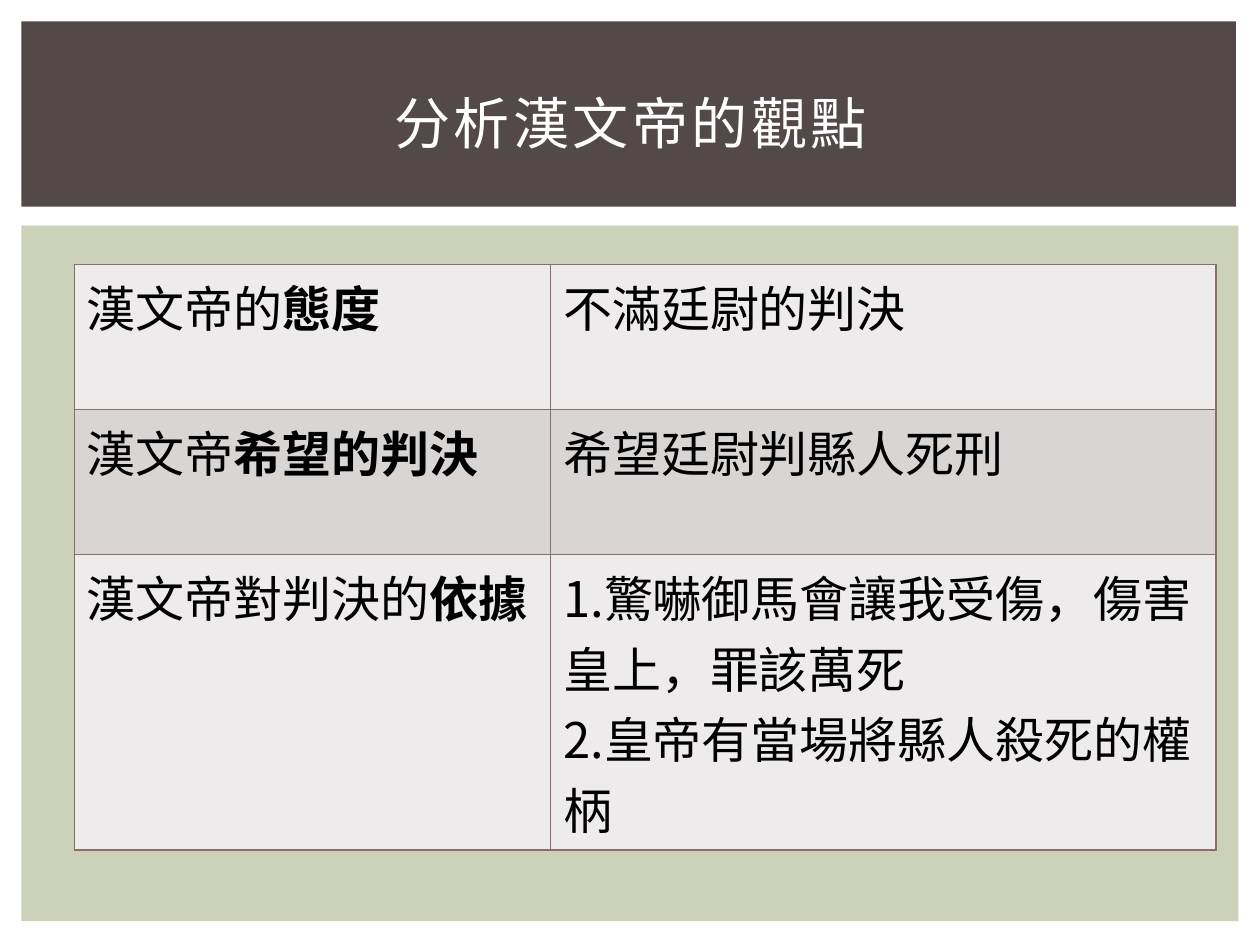
import pptx
import pptx.util
import pptx.dml.color
import pptx.enum.shapes
import pptx.enum.text
import pptx.oxml.ns
from lxml import etree

Inches = pptx.util.Inches
FONT = "Noto Sans CJK SC"
COLORS = {
    "white": "FFFFFF",
    "black": "000000",
    "panel": "CCD1B9",
    "band": "534949",
    "light row": "EDEBEB",
    "dark row": "D9D5D4",
    "border": "87706B",
}


def rgb(name):
    return pptx.dml.color.RGBColor.from_string(COLORS[name])


def add_text(para, text, size=28, color="black", bold=False, spacing=None):
    span = para.add_run()
    span.text = text
    span.font.name = FONT
    span.font.size = pptx.util.Pt(size)
    span.font.bold = bold
    span.font.color.rgb = rgb(color)
    properties = span.font._element
    east_asian = etree.SubElement(properties, pptx.oxml.ns.qn("a:ea"))
    east_asian.set("typeface", FONT)
    if spacing is not None:
        properties.set("spc", str(spacing * 100))


class SlideBuilder:
    def __init__(self, page):
        self.page = page

    def rectangle(self, left, top, width, height, color):
        box = self.page.shapes.add_shape(
            pptx.enum.shapes.MSO_SHAPE.RECTANGLE,
            Inches(left), Inches(top), Inches(width), Inches(height))
        box.shadow.inherit = False
        box.fill.solid()
        box.fill.fore_color.rgb = rgb(color)
        box.line.fill.background()
        return box

    def title(self, text, left, top, width, height, behind):
        box = self.page.shapes.title
        box.left, box.top = Inches(left), Inches(top)
        box.width, box.height = Inches(width), Inches(height)
        behind.element.addnext(box.element)
        box.text_frame.word_wrap = True
        box.text_frame.vertical_anchor = pptx.enum.text.MSO_ANCHOR.MIDDLE
        para = box.text_frame.paragraphs[0]
        para.alignment = pptx.enum.text.PP_ALIGN.CENTER
        add_text(para, text, size=32, color="white", spacing=2)

    def border(self, cell):
        properties = cell._tc.get_or_add_tcPr()
        for index, side in enumerate(("lnL", "lnR", "lnT", "lnB")):
            line = etree.Element(pptx.oxml.ns.qn("a:" + side), w="12700")
            fill = etree.SubElement(line, pptx.oxml.ns.qn("a:solidFill"))
            etree.SubElement(fill, pptx.oxml.ns.qn("a:srgbClr"), val=COLORS["border"])
            properties.insert(index, line)

    def table(self, rows, left, top, widths, row_height):
        frame = self.page.shapes.add_table(
            len(rows), len(widths), Inches(left), Inches(top),
            Inches(sum(widths)), Inches(row_height * len(rows)))
        table = frame.table
        table.first_row = False
        table.horz_banding = False
        for column, width in zip(table.columns, widths):
            column.width = Inches(width)
        for r, row in enumerate(rows):
            table.rows[r].height = Inches(row_height)
            for c, paragraphs in enumerate(row):
                cell = table.cell(r, c)
                cell.fill.solid()
                cell.fill.fore_color.rgb = rgb("dark row" if r % 2 else "light row")
                self.border(cell)
                for p, spans in enumerate(paragraphs):
                    text_frame = cell.text_frame
                    para = text_frame.add_paragraph() if p else text_frame.paragraphs[0]
                    for text, bold in spans:
                        add_text(para, text, bold=bold)


# Each cell is a list of paragraphs, each paragraph a list of (text, bold)
ROWS = [
    ([[("漢文帝的", False), ("態度", True)]],
     [[("不滿廷尉的判決", False)]]),
    ([[("漢文帝", False), ("希望的判決", True)]],
     [[("希望廷尉判縣人死刑", False)]]),
    ([[("漢文帝對判決的", False), ("依據", True)]],
     [[("1.驚嚇御馬會讓我受傷，傷害皇上，罪該萬死", False)],
      [("2.皇帝有當場將縣人殺死的權柄", False)]]),
]


def main():
    deck = pptx.Presentation()
    deck.slide_width, deck.slide_height = Inches(10), Inches(7.5)
    page = deck.slides.add_slide(deck.slide_layouts[5])
    page.background.fill.solid()
    page.background.fill.fore_color.rgb = rgb("white")
    builder = SlideBuilder(page)

    # Backdrop panels
    builder.rectangle(0.17, 1.79, 9.66, 5.52, "panel")
    band = builder.rectangle(0.17, 0.17, 9.64, 1.47, "band")

    # Title on the dark band
    builder.title("分析漢文帝的觀點", 0.42, 0.39, 9.17, 1.15, behind=band)

    # Analysis table
    builder.table(ROWS, 0.59, 2.1, widths=(3.78, 5.28), row_height=1.15)

    deck.save("out.pptx")


if __name__ == "__main__":
    main()
